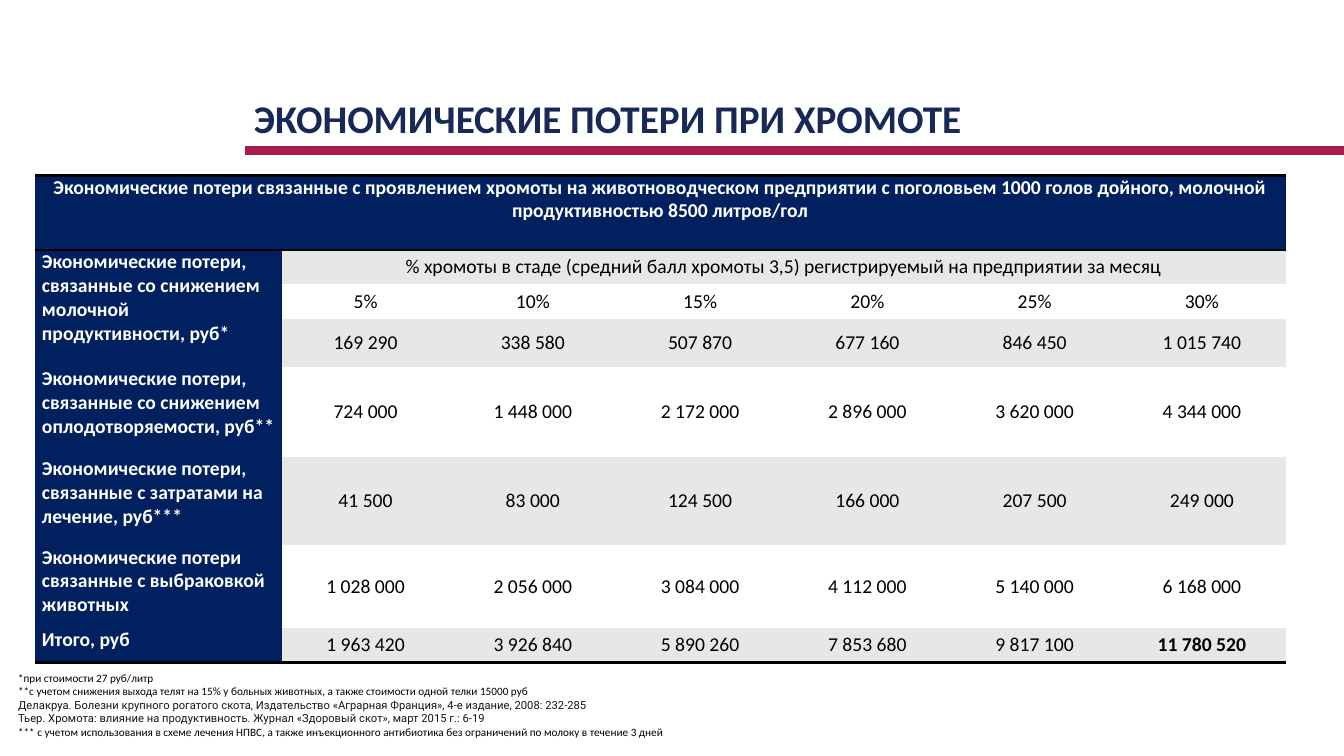
from dataclasses import dataclass

from lxml.etree import SubElement
from pptx import Presentation
from pptx.dml.color import RGBColor
from pptx.enum.shapes import MSO_CONNECTOR
from pptx.enum.text import MSO_ANCHOR, MSO_AUTO_SIZE, PP_ALIGN
from pptx.oxml import parse_xml
from pptx.oxml.ns import nsdecls, qn
from pptx.util import Pt


@dataclass(frozen=True)
class Theme:
    font: str = "Calibri"
    source_font: str = "Roboto"
    title: str = "182957"
    rule: str = "A81D47"
    header: str = "002060"
    band: str = "E7E7E7"
    white: str = "FFFFFF"
    black: str = "000000"
    source: str = "151515"
    title_size: float = 28
    table_size: float = 14
    note_size: float = 8


@dataclass(frozen=True)
class Loss:
    label: str
    at_5_percent: int  # losses grow in proportion to the lameness rate


@dataclass(frozen=True)
class Note:
    text: str
    is_source: bool = False


T = Theme()
STEPS = range(1, 7)
NO_STYLE = "{2D5ABB26-0587-4C30-8999-92F81FD0307C}"
COLUMNS = [176.4] + [119.5] * len(STEPS)
ROWS = [53.3, 24.5, 24.5, 34.6, 64.1, 63.4, 59, 24.5]

TITLE = "ЭКОНОМИЧЕСКИЕ ПОТЕРИ ПРИ ХРОМОТЕ"
CAPTION = ("Экономические потери связанные с проявлением хромоты на животноводческом "
           "предприятии с поголовьем 1000 голов дойного, молочной продуктивностью "
           "8500 литров/гол")
RATE_CAPTION = ("% хромоты в стаде (средний балл хромоты 3,5) регистрируемый "
                "на предприятии за месяц")
LOSSES = [
    Loss("Экономические потери, связанные со снижением молочной продуктивности, руб*", 169290),
    Loss("Экономические потери, связанные со снижением оплодотворяемости, руб**", 724000),
    Loss("Экономические потери, связанные с затратами на лечение, руб***", 41500),
    Loss("Экономические потери связанные с выбраковкой животных", 1028000),
    Loss("Итого, руб", 1963420),
]
NOTES = [
    Note("*при стоимости 27 руб/литр"),
    Note("**с учетом снижения выхода телят на 15% у больных животных, "
         "а также стоимости одной телки 15000 руб"),
    Note("Делакруа. Болезни крупного рогатого скота, Издательство «Аграрная Франция», "
         "4-е издание, 2008: 232-285", True),
    Note("Тьер. Хромота: влияние на продуктивность. Журнал «Здоровый скот», "
         "март 2015 г.: 6-19", True),
    Note("*** с учетом использования в схеме лечения НПВС, а также инъекционного "
         "антибиотика без ограничений по молоку в течение 3 дней"),
]


def style(p, size: float, color: str, bold: bool = False, font: str = T.font) -> None:
    p.font.name, p.font.size, p.font.bold = font, Pt(size), bold
    p.font.color.rgb = RGBColor.from_string(color)


def add_title(s) -> None:
    sp = s.shapes.title
    sp.left, sp.top, sp.width, sp.height = Pt(181.4), Pt(67), Pt(697.7), Pt(33.8)
    tf = sp.text_frame
    tf.text = TITLE
    tf.margin_left = tf.margin_right = tf.margin_top = tf.margin_bottom = 0
    tf.vertical_anchor, tf.word_wrap = MSO_ANCHOR.MIDDLE, True
    tf.auto_size = MSO_AUTO_SIZE.NONE
    p = tf.paragraphs[0]
    p.alignment = PP_ALIGN.LEFT
    style(p, T.title_size, T.title, bold=True)


def add_rule(s) -> None:
    line = s.shapes.add_connector(MSO_CONNECTOR.STRAIGHT, Pt(175), Pt(107.5), Pt(960), Pt(107.5))
    line.line.color.rgb = RGBColor.from_string(T.rule)
    line.line.width = Pt(6)
    SubElement(line._element.spPr, qn("a:effectLst"))


def add_borders(cell, sides: str) -> None:
    tc_pr = cell._tc.get_or_add_tcPr()
    for i, side in enumerate(sides):
        tc_pr.insert(i, parse_xml(
            f'<a:ln{side} {nsdecls("a")} w="{Pt(2)}"><a:solidFill>'
            f'<a:srgbClr val="{T.black}"/></a:solidFill></a:ln{side}>'))


def format_cell(cell, row: int, col: int) -> None:
    is_head = row == 0 or col == 0
    fill = T.header if is_head else T.band if row % 2 else T.white
    cell.fill.solid()
    cell.fill.fore_color.rgb = RGBColor.from_string(fill)
    cell.margin_left = cell.margin_right = Pt(5)
    cell.margin_top = cell.margin_bottom = 0
    cell.vertical_anchor = MSO_ANCHOR.TOP if is_head else MSO_ANCHOR.MIDDLE
    p = cell.text_frame.paragraphs[0]
    p.alignment = PP_ALIGN.LEFT if col == 0 and row else PP_ALIGN.CENTER
    is_grand_total = (row, col) == (len(ROWS) - 1, len(COLUMNS) - 1)
    style(p, T.table_size, T.white if is_head else T.black, bold=is_head or is_grand_total)
    if row == 0:
        add_borders(cell, "TB")
    elif row == len(ROWS) - 1:
        add_borders(cell, "B")


def add_loss_table(s) -> None:
    frame = s.shapes.add_table(len(ROWS), len(COLUMNS), Pt(25), Pt(125.3),
                               Pt(sum(COLUMNS)), Pt(sum(ROWS)))
    table = frame.table
    table._tbl.tblPr.find(qn("a:tableStyleId")).text = NO_STYLE
    for column, width in zip(table.columns, COLUMNS):
        column.width = Pt(width)
    for row, height in zip(table.rows, ROWS):
        row.height = Pt(height)

    # Captions, rates and amounts
    table.cell(0, 0).text = CAPTION
    table.cell(1, 1).text = RATE_CAPTION
    for step in STEPS:
        table.cell(2, step).text = f"{5 * step}%"
    for row, loss in enumerate(LOSSES, start=3):
        label_row = 1 if row == 3 else row
        table.cell(label_row, 0).text = loss.label
        for step in STEPS:
            table.cell(row, step).text = f"{loss.at_5_percent * step:,}".replace(",", " ")

    for row in range(len(ROWS)):
        for col in range(len(COLUMNS)):
            format_cell(table.cell(row, col), row, col)

    # Spanning cells
    last = len(COLUMNS) - 1
    table.cell(0, 0).merge(table.cell(0, last))
    table.cell(1, 0).merge(table.cell(3, 0))
    table.cell(1, 1).merge(table.cell(1, last))


def add_notes(s) -> None:
    tf = s.shapes.add_textbox(Pt(5.8), Pt(476), Pt(912), Pt(64)).text_frame
    tf.word_wrap = True
    for i, note in enumerate(NOTES):
        p = tf.add_paragraph() if i else tf.paragraphs[0]
        p.text = note.text
        style(p, T.note_size, T.source if note.is_source else T.black,
              font=T.source_font if note.is_source else T.font)


def main() -> None:
    prs = Presentation()
    prs.slide_width, prs.slide_height = Pt(960), Pt(540)
    s = prs.slides.add_slide(prs.slide_layouts[5])
    add_rule(s)
    add_title(s)
    add_loss_table(s)
    add_notes(s)
    prs.save("out.pptx")


if __name__ == "__main__":
    main()
